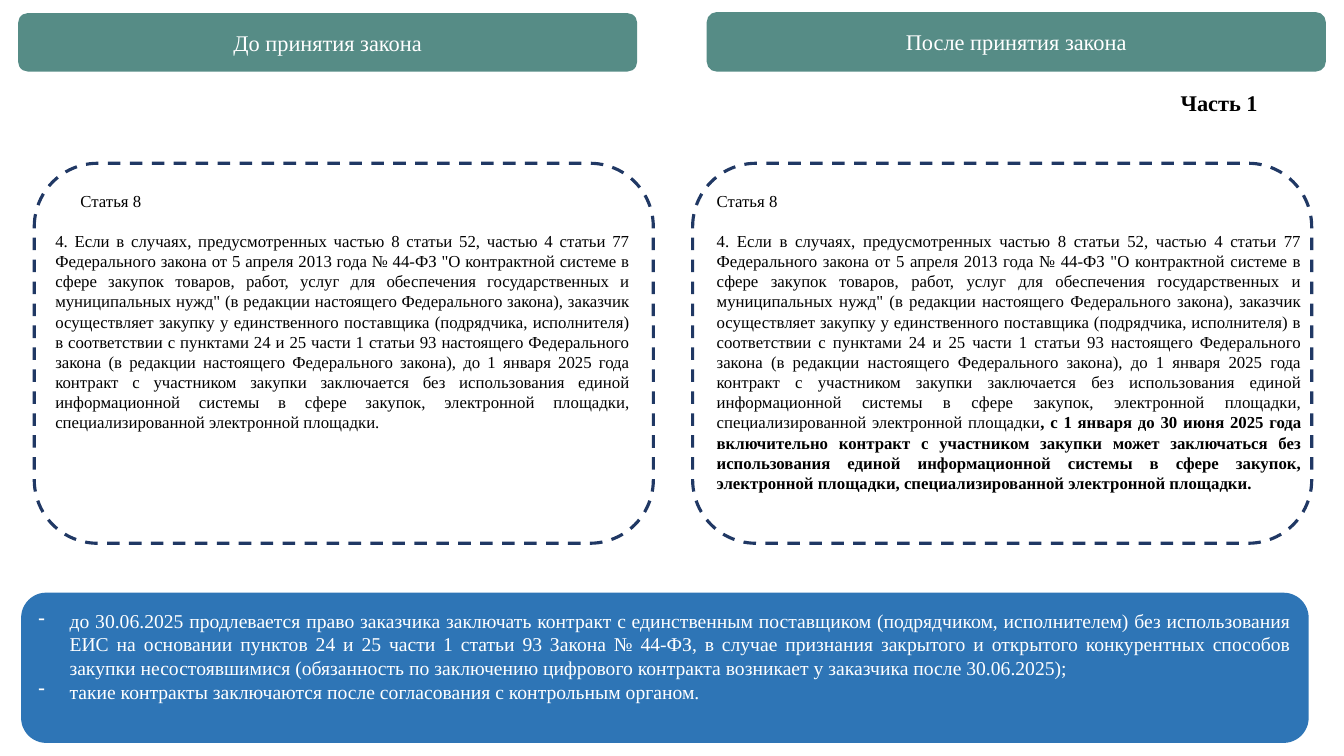
from pptx import Presentation
from pptx.dml.color import RGBColor
from pptx.enum.dml import MSO_LINE
from pptx.enum.shapes import MSO_SHAPE
from pptx.enum.text import MSO_ANCHOR, MSO_AUTO_SIZE, PP_ALIGN
from pptx.oxml.xmlchemy import OxmlElement
from pptx.util import Pt

PX = 9144
FONT = "Times New Roman"
GREEN, NAVY, BLUE, WHITE, BLACK = "568C86", "203864", "2E75B6", "FFFFFF", "000000"

PART = "Часть 1"
CLAUSE = (
    "4. Если в случаях, предусмотренных частью 8 статьи 52, частью 4 статьи 77 "
    "Федерального закона от 5 апреля 2013 года № 44-ФЗ \"О контрактной системе в "
    "сфере закупок товаров, работ, услуг для обеспечения государственных и "
    "муниципальных нужд\" (в редакции настоящего Федерального закона), заказчик "
    "осуществляет закупку у единственного поставщика (подрядчика, исполнителя) в "
    "соответствии с пунктами 24 и 25 части 1 статьи 93 настоящего Федерального "
    "закона (в редакции настоящего Федерального закона), до 1 января 2025 года "
    "контракт с участником закупки заключается без использования единой "
    "информационной системы в сфере закупок, электронной площадки, "
    "специализированной электронной площадки"
)
ADDED = (
    ", с 1 января до 30 июня 2025 года включительно контракт с участником закупки "
    "может заключаться без использования единой информационной системы в сфере "
    "закупок, электронной площадки, специализированной электронной площадки."
)
SIDES = [
    dict(head="До принятия закона", bar=(18, 13, 614, 58), card=34,
         text=(45, 184, 590, 273), shift=25, runs=[(CLAUSE + ".", False)]),
    dict(head="После принятия закона", bar=(701, 12, 614, 59), card=687,
         text=(701, 184, 600, 333), shift=0, runs=[(CLAUSE, False), (ADDED, True)]),
]
NOTES = [
    "до 30.06.2025 продлевается право заказчика заключать контракт с единственным "
    "поставщиком (подрядчиком, исполнителем) без использования ЕИС на основании "
    "пунктов 24 и 25 части 1 статьи 93 Закона № 44-ФЗ, в случае признания закрытого "
    "и открытого конкурентных способов закупки несостоявшимися (обязанность по "
    "заключению цифрового контракта возникает у заказчика после 30.06.2025);",
    "такие контракты заключаются после согласования с контрольным органом.",
]


def color(code):
    return RGBColor.from_string(code)


def assign(item, **values):
    for name, value in values.items():
        setattr(item, name, value)


def scale(box):
    return [n * PX for n in box]


def place(shape, box):
    assign(shape, **dict(zip(("left", "top", "width", "height"), scale(box))))


def panel(box, fill=None, line=None):
    shape = slide.shapes.add_shape(MSO_SHAPE.ROUNDED_RECTANGLE, *scale(box))
    shape.shadow.inherit = False
    if fill:
        shape.fill.solid()
        shape.fill.fore_color.rgb = color(fill)
    else:
        shape.fill.background()
    if line:
        shape.line.color.rgb = color(line)
        assign(shape.line, width=Pt(2.25), dash_style=MSO_LINE.DASH)
    else:
        shape.line.fill.background()
    return shape


def write(para, runs, size, ink, align):
    assign(para, alignment=align, space_before=Pt(0))
    for text, bold in runs:
        run = para.add_run()
        run.text = text
        assign(run.font, name=FONT, size=Pt(size), bold=bold)
        run.font.color.rgb = color(ink)


def indent(para, left, first):
    props = para._p.get_or_add_pPr()
    props.set("marL", str(left * PX))
    props.set("indent", str(first * PX))
    return props


def dash(para):
    props = indent(para, 31, -31)
    props.append(OxmlElement("a:buFontTx"))
    mark = OxmlElement("a:buChar")
    mark.set("char", "-")
    props.append(mark)


deck = Presentation()
assign(deck, slide_width=1333 * PX, slide_height=750 * PX)
slide = deck.slides.add_slide(deck.slide_layouts[1])
title, body = slide.placeholders

for side in SIDES:
    bar = panel(side["bar"], fill=GREEN)
    bar.text_frame.vertical_anchor = MSO_ANCHOR.MIDDLE
    write(bar.text_frame.paragraphs[0], [(side["head"], False)], 16, WHITE, PP_ALIGN.CENTER)
    panel((side["card"], 162, 614, 377), line=NAVY)
    frame = slide.shapes.add_textbox(*scale(side["text"])).text_frame
    frame.word_wrap = True
    label, clause = frame.paragraphs[0], frame.add_paragraph()
    write(label, [("Статья 8", False)], 12, BLACK, PP_ALIGN.JUSTIFY)
    indent(label, 0, side["shift"])
    write(clause, side["runs"], 12, BLACK, PP_ALIGN.JUSTIFY)
    clause.space_before = Pt(14.4)

place(title, (1161, 83, 98, 37))
assign(title.text_frame, word_wrap=False, auto_size=MSO_AUTO_SIZE.NONE,
       vertical_anchor=MSO_ANCHOR.TOP)
write(title.text_frame.paragraphs[0], [(PART, True)], 16, BLACK, PP_ALIGN.LEFT)

panel((21, 588, 1277, 149), fill=BLUE)
place(body, (28, 588, 1263, 149))
slide.shapes._spTree.append(body._element)
frame = body.text_frame
assign(frame, word_wrap=True, auto_size=MSO_AUTO_SIZE.NONE,
       vertical_anchor=MSO_ANCHOR.TOP, margin_top=16 * PX)
for i, note in enumerate(NOTES):
    para = frame.add_paragraph() if i else frame.paragraphs[0]
    write(para, [(note, False)], 14, WHITE, PP_ALIGN.JUSTIFY)
    dash(para)

deck.save("out.pptx")
